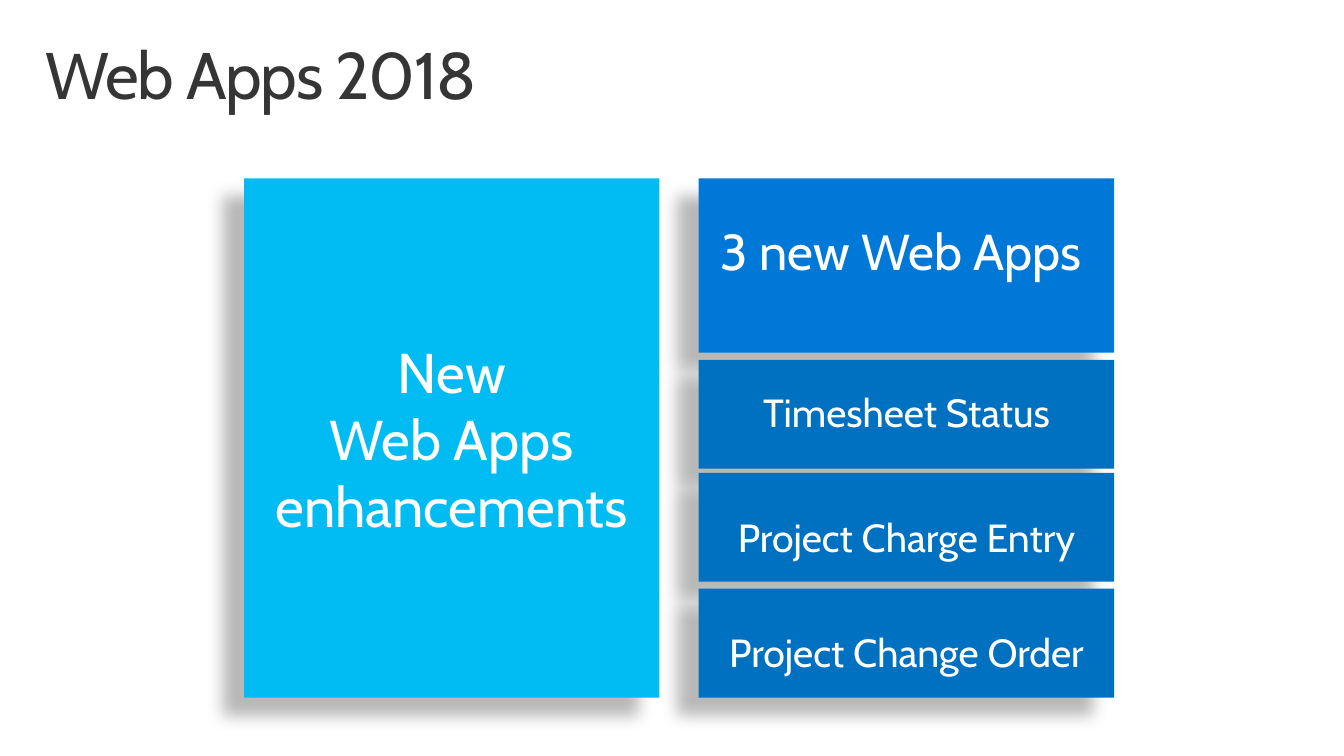
from dataclasses import dataclass

import pptx
import pptx.dml.color
import pptx.enum.shapes
import pptx.enum.text
import pptx.oxml
import pptx.oxml.ns
import pptx.util
from pptx.util import Inches


@dataclass(frozen=True)
class Theme:
    font: str = "Cabin"
    title_color: str = "353535"
    text_color: str = "FFFFFF"
    enhancements_fill: str = "00BCF2"
    heading_fill: str = "0078D7"
    app_fill: str = "0070C0"
    title_size: float = 47
    enhancements_size: float = 40
    heading_size: float = 36
    app_size: float = 28


@dataclass(frozen=True)
class Tile:
    """Box and margins in inches; margins run left, top, right, bottom."""
    lines: tuple[str, ...]
    left: float
    top: float
    height: float
    fill: str
    size: float
    margins: tuple[float, float, float, float] = (0.1, 0.05, 0.1, 0.05)
    line_spacing: float = 1.0


THEME = Theme()
TILE_WIDTH = 4.12
LEFT_COLUMN, RIGHT_COLUMN = 2.42, 6.93
TILES_TOP = 1.77
APP_HEIGHT = 1.08
LOW_TEXT = (0.2, 0.4, 0.2, 0.16)

APPS = (
    ("Timesheet Status", 3.57, (0.2, 0.16, 0.2, 0.16)),
    ("Project Charge Entry", 4.69, LOW_TEXT),
    ("Project Change Order", 5.84, LOW_TEXT),
)
TILES = (
    Tile(("New", "Web Apps enhancements"), LEFT_COLUMN, TILES_TOP, 5.15,
         THEME.enhancements_fill, THEME.enhancements_size),
    Tile(("3 new Web Apps",), RIGHT_COLUMN, TILES_TOP, 1.73,
         THEME.heading_fill, THEME.heading_size, (0.1, 0.05, 0.2, 0.35)),
    *(Tile((name,), RIGHT_COLUMN, top, APP_HEIGHT, THEME.app_fill,
           THEME.app_size, margins, 0.9) for name, top, margins in APPS),
)


def write_text(shape, lines: tuple[str, ...], *, size: float, color: str,
               margins: tuple[float, float, float, float],
               alignment=pptx.enum.text.PP_ALIGN.LEFT,
               anchor=pptx.enum.text.MSO_ANCHOR.TOP,
               line_spacing: float = 1.0, tracking: int = 0) -> None:
    """Fill a shape with one paragraph per line; tracking is in 1/100 point."""
    frame = shape.text_frame
    frame.word_wrap = True
    frame.vertical_anchor = anchor
    (frame.margin_left, frame.margin_top,
     frame.margin_right, frame.margin_bottom) = map(Inches, margins)
    for index, line in enumerate(lines):
        paragraph = frame.add_paragraph() if index else frame.paragraphs[0]
        paragraph.alignment = alignment
        paragraph.line_spacing = line_spacing
        run = paragraph.add_run()
        run.text = line
        run.font.name = THEME.font
        run.font.size = pptx.util.Pt(size)
        run.font.color.rgb = pptx.dml.color.RGBColor.from_string(color)
        if tracking:
            run.font._element.set("spc", str(tracking))


def add_soft_shadow(shape) -> None:
    """Cast a blurred shadow down and to the left."""
    shape.shadow.inherit = False
    effects = shape._element.spPr.find(pptx.oxml.ns.qn("a:effectLst"))
    effects.append(pptx.oxml.parse_xml(
        f'<a:outerShdw {pptx.oxml.ns.nsdecls("a")} blurRad="150000" '
        'dist="250000" dir="8460000" algn="ctr" rotWithShape="0">'
        '<a:srgbClr val="000000"><a:alpha val="28000"/></a:srgbClr>'
        '</a:outerShdw>'))


def add_tile(slide, tile: Tile) -> None:
    shape = slide.shapes.add_shape(
        pptx.enum.shapes.MSO_SHAPE.RECTANGLE, Inches(tile.left),
        Inches(tile.top), Inches(TILE_WIDTH), Inches(tile.height))
    shape.fill.solid()
    shape.fill.fore_color.rgb = pptx.dml.color.RGBColor.from_string(tile.fill)
    shape.line.fill.background()
    add_soft_shadow(shape)
    write_text(shape, tile.lines, size=tile.size, color=THEME.text_color,
               margins=tile.margins, line_spacing=tile.line_spacing,
               alignment=pptx.enum.text.PP_ALIGN.CENTER,
               anchor=pptx.enum.text.MSO_ANCHOR.MIDDLE)


def add_title(slide, text: str) -> None:
    title = slide.shapes.add_textbox(
        Inches(0.29), Inches(0.32), Inches(12.75), Inches(0.98))
    write_text(title, (text,), size=THEME.title_size, color=THEME.title_color,
               margins=(0.16, 0.1, 0.16, 0.1), line_spacing=0.9, tracking=-100)


def main() -> None:
    presentation = pptx.Presentation()
    presentation.slide_width = Inches(13.33)
    presentation.slide_height = Inches(7.5)
    slide = presentation.slides.add_slide(presentation.slide_layouts[6])
    add_title(slide, "Web Apps 2018")
    for tile in TILES:
        add_tile(slide, tile)
    presentation.save("out.pptx")


if __name__ == "__main__":
    main()
